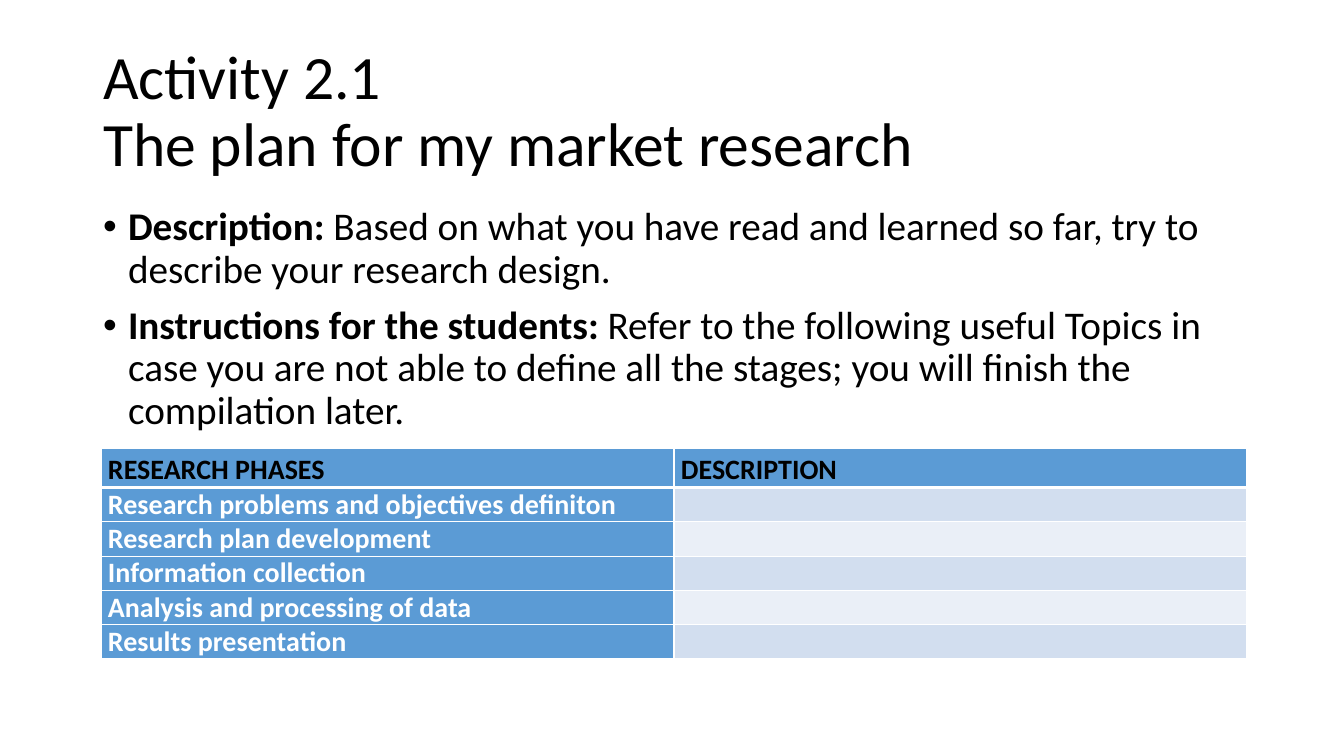
from dataclasses import dataclass

from lxml import etree
from pptx import Presentation
from pptx.dml.color import RGBColor
from pptx.enum.text import MSO_ANCHOR, MSO_AUTO_SIZE, PP_ALIGN
from pptx.oxml.ns import qn
from pptx.util import Emu, Pt

LEFT = PP_ALIGN.LEFT
TOP = MSO_ANCHOR.TOP
MIDDLE = MSO_ANCHOR.MIDDLE
NO_AUTOFIT = MSO_AUTO_SIZE.NONE

BLACK = RGBColor(0x00, 0x00, 0x00)
WHITE = RGBColor(0xFF, 0xFF, 0xFF)
BLUE = RGBColor(0x5B, 0x9B, 0xD5)
BAND_DARK = RGBColor(0xD2, 0xDE, 0xEF)
BAND_LIGHT = RGBColor(0xEA, 0xEF, 0xF7)

FONT = "Calibri"
EMU_PER_PX = 914400 / 100.8
HEADER_HEIGHT = 39
PHASE_HEIGHT = 34
CELL_INSET = 7
BULLET_INDENT = 25
THIN = 1
THICK = 3


@dataclass(frozen=True)
class Box:
    left: int
    top: int
    width: int
    height: int


@dataclass(frozen=True)
class Guideline:
    label: str
    detail: str


TITLE_BOX = Box(93, 40, 1159, 146)
GUIDELINES_BOX = Box(93, 202, 1159, 480)
PHASES_BOX = Box(101, 448, 1146, 210)

TITLE = "Activity 2.1\vThe plan for my market research"
GUIDELINES = [
    Guideline(
        "Description: ",
        "Based on what you have read and learned so far, try to describe your research design.",
    ),
    Guideline(
        "Instructions for the students: ",
        "Refer to the following useful Topics in case you are not able to define all "
        "the stages; you will finish the compilation later.",
    ),
]
HEADINGS = ["RESEARCH PHASES", "DESCRIPTION"]
PHASES = [
    "Research problems and objectives definiton",
    "Research plan development",
    "Information collection",
    "Analysis and processing of data",
    "Results presentation",
]


def px(length: int) -> Emu:
    return Emu(round(length * EMU_PER_PX))


def place(placeholder, box: Box, anchor) -> None:
    placeholder.left, placeholder.top = px(box.left), px(box.top)
    placeholder.width, placeholder.height = px(box.width), px(box.height)
    placeholder.text_frame.word_wrap = True
    placeholder.text_frame.auto_size = NO_AUTOFIT
    placeholder.text_frame.vertical_anchor = anchor


def style(font, size: int, color: RGBColor, bold: bool) -> None:
    font.name = FONT
    font.size = Pt(size)
    font.color.rgb = color
    font.bold = bold


def write_title(title) -> None:
    place(title, TITLE_BOX, MIDDLE)
    title.text_frame.text = TITLE
    heading = title.text_frame.paragraphs[0]
    heading.alignment = LEFT
    heading.line_spacing = 0.9
    for run in heading.runs:
        style(run.font, 44, BLACK, False)


def write_guidelines(body) -> None:
    place(body, GUIDELINES_BOX, TOP)
    frame = body.text_frame
    for index, guideline in enumerate(GUIDELINES):
        bullet = frame.add_paragraph() if index else frame.paragraphs[0]
        bullet.line_spacing = 0.9
        bullet.space_before = Pt(10)
        properties = bullet._p.get_or_add_pPr()
        properties.set("marL", str(px(BULLET_INDENT)))
        properties.set("indent", str(-px(BULLET_INDENT)))
        for text, bold in ((guideline.label, True), (guideline.detail, False)):
            run = bullet.add_run()
            run.text = text
            style(run.font, 28, BLACK, bold)


def set_borders(cell, top: int, bottom: int) -> None:
    properties = cell._tc.get_or_add_tcPr()
    for side, width in (("L", THIN), ("R", THIN), ("T", top), ("B", bottom)):
        border = etree.SubElement(properties, qn(f"a:ln{side}"), w=str(Pt(width)))
        fill = etree.SubElement(border, qn("a:solidFill"))
        etree.SubElement(fill, qn("a:srgbClr"), val=str(WHITE))


def write_cell(cell, text: str, row: int, fill: RGBColor) -> None:
    is_header = row == 0
    set_borders(cell, THICK if row == 1 else THIN, THICK if is_header else THIN)
    cell.fill.solid()
    cell.fill.fore_color.rgb = fill
    cell.margin_left = cell.margin_right = px(CELL_INSET)
    cell.margin_top = cell.margin_bottom = 0
    cell.text_frame.text = text
    line = cell.text_frame.paragraphs[0]
    line.line_spacing = 1.15 if is_header else 1.0
    style(line.font, 20, BLACK if is_header else WHITE, True)
    for run in line.runs:
        style(run.font, 20, BLACK if is_header else WHITE, True)


def add_phases(slide) -> None:
    rows = [HEADINGS] + [[phase, ""] for phase in PHASES]
    box = PHASES_BOX
    phases = slide.shapes.add_table(
        len(rows), len(HEADINGS), px(box.left), px(box.top), px(box.width), px(box.height)
    ).table
    for column in phases.columns:
        column.width = px(box.width // len(HEADINGS))
    for row, texts in enumerate(rows):
        phases.rows[row].height = px(PHASE_HEIGHT if row else HEADER_HEIGHT)
        band = BAND_DARK if row % 2 else BAND_LIGHT
        for column, text in enumerate(texts):
            fill = band if row and column else BLUE
            write_cell(phases.cell(row, column), text, row, fill)


def main() -> None:
    presentation = Presentation()
    presentation.slide_width = px(1344)
    presentation.slide_height = px(756)
    slide = presentation.slides.add_slide(presentation.slide_layouts[1])
    write_title(slide.shapes.title)
    write_guidelines(slide.placeholders[1])
    add_phases(slide)
    presentation.save("out.pptx")


if __name__ == "__main__":
    main()
